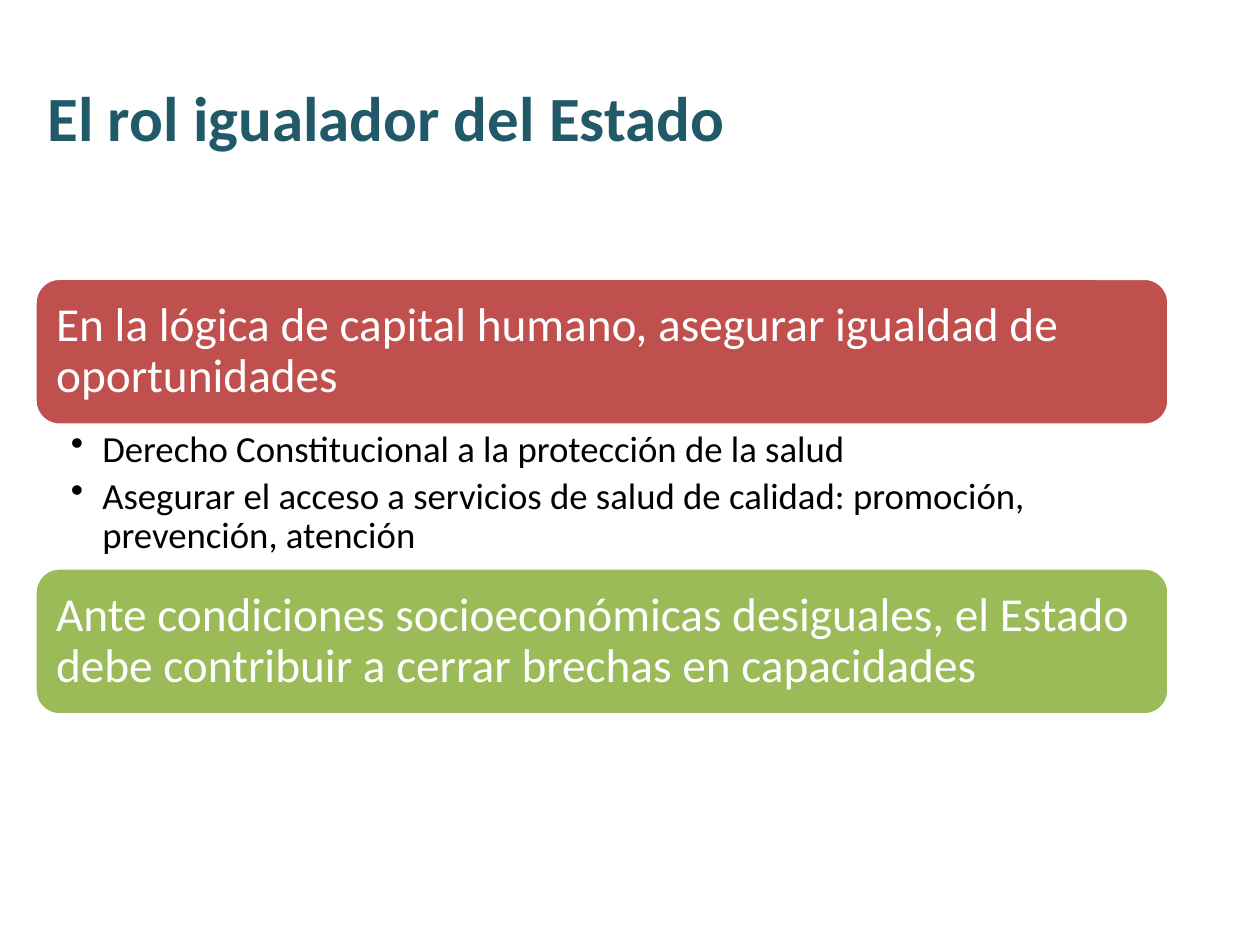
import pptx
import pptx.dml.color
import pptx.enum.shapes
import pptx.enum.text
import pptx.oxml
import pptx.oxml.ns
import pptx.util
from pptx.util import Pt

LEFT, WIDTH = 20, 648
BAR_HEIGHT, BULLETS_HEIGHT = 84, 81.5
BARS_TOP = 159
MIDDLE = pptx.enum.text.MSO_ANCHOR.MIDDLE


def color(value):
    return pptx.dml.color.RGBColor.from_string(value)


def write(p, text, size, fill, bold=False):
    """Put one left-aligned run of formatted text in a paragraph."""
    p.alignment = pptx.enum.text.PP_ALIGN.LEFT
    r = p.add_run()
    r.text = text
    for name, value in {"name": "Calibri", "size": Pt(size), "bold": bold}.items():
        setattr(r.font, name, value)
    r.font.color.rgb = color(fill)


prs = pptx.Presentation()
prs.slide_width, prs.slide_height = Pt(720), Pt(540)
s = prs.slides.add_slide(prs.slide_layouts[5])

# Title
title = s.shapes.title
title.left, title.top, title.width, title.height = Pt(LEFT), Pt(21.5), Pt(WIDTH), Pt(90)
title.text_frame.vertical_anchor = MIDDLE
write(title.text_frame.paragraphs[0], "El rol igualador del Estado", 36, "215968", True)

# Coloured bars, with room for the bullets between them
bars = [
    ("En la lógica de capital humano, asegurar igualdad de oportunidades", "C0504D"),
    ("Ante condiciones socioeconómicas desiguales, el Estado debe contribuir "
     "a cerrar brechas en capacidades", "9BBB59"),
]
for i, (text, fill) in enumerate(bars):
    top = BARS_TOP + i * (BAR_HEIGHT + BULLETS_HEIGHT)
    sp = s.shapes.add_shape(pptx.enum.shapes.MSO_SHAPE.ROUNDED_RECTANGLE,
                            Pt(LEFT), Pt(top), Pt(WIDTH), Pt(BAR_HEIGHT))
    sp.shadow.inherit = False
    sp.fill.solid()
    sp.fill.fore_color.rgb = color(fill)
    sp.line.color.rgb = color("FFFFFF")
    sp.line.width = Pt(2)
    tf = sp.text_frame
    tf.word_wrap = True
    tf.vertical_anchor = MIDDLE
    for side in ("left", "right", "top", "bottom"):
        setattr(tf, f"margin_{side}", Pt(8))
    p = tf.paragraphs[0]
    p.line_spacing = 0.9
    write(p, text, 27, "FFFFFF")

# Bullets
bullets = [
    "Derecho Constitucional a la protección de la salud",
    "Asegurar el acceso a servicios de salud de calidad: promoción, prevención, atención",
]
tf = s.shapes.add_textbox(Pt(LEFT), Pt(BARS_TOP + BAR_HEIGHT),
                          Pt(WIDTH), Pt(BULLETS_HEIGHT)).text_frame
tf.word_wrap = True
for side, margin in {"left": 20.5, "right": 15, "top": 3, "bottom": 3}.items():
    setattr(tf, f"margin_{side}", Pt(margin))
for i, text in enumerate(bullets):
    p = tf.add_paragraph() if i else tf.paragraphs[0]
    p.level = 1
    p.line_spacing = 0.9
    p.space_after = Pt(4.2)
    pPr = p._p.get_or_add_pPr()
    pPr.set("marL", str(Pt(18)))
    pPr.set("indent", str(Pt(-18)))
    pPr.append(pptx.oxml.parse_xml(
        f'<a:buChar {pptx.oxml.ns.nsdecls("a")} char="•"/>'))
    write(p, text, 21, "000000")

prs.save("out.pptx")
